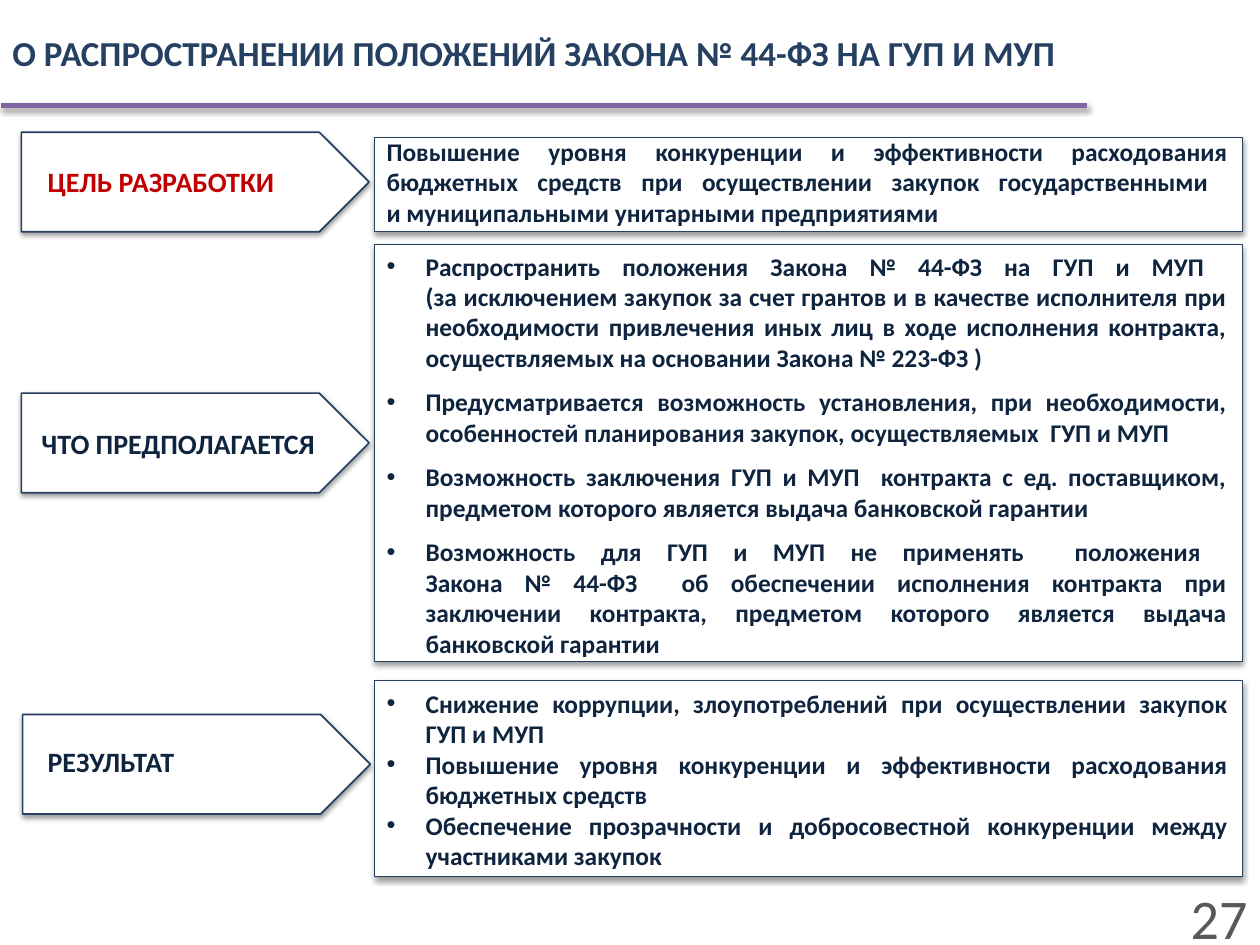
from copy import deepcopy
from dataclasses import dataclass
from typing import Optional

from lxml.etree import SubElement
from pptx import Presentation
from pptx.dml.color import RGBColor
from pptx.enum.shapes import MSO_CONNECTOR, MSO_SHAPE
from pptx.enum.text import MSO_ANCHOR, PP_ALIGN
from pptx.oxml.ns import qn
from pptx.util import Inches, Pt


@dataclass(frozen=True)
class Theme:
    font: str = "Calibri"
    white: str = "FFFFFF"
    navy: str = "254061"
    text: str = "0F243E"
    red: str = "C00000"
    purple: str = "8064A2"
    grey: str = "595959"
    shadow: str = "000000"
    title_size: float = 20
    label_size: float = 16
    body_size: float = 14.5
    number_size: float = 32


THEME = Theme()


@dataclass(frozen=True)
class Area:
    left: float
    top: float
    width: float
    height: float

    def lengths(self) -> list:
        return [Inches(v) for v in (self.left, self.top, self.width, self.height)]


@dataclass(frozen=True)
class TextStyle:
    size: float
    color: str
    bold: bool = True
    align: Optional[PP_ALIGN] = None
    anchor: MSO_ANCHOR = MSO_ANCHOR.TOP
    bullet: bool = False
    spacing: float = 0


@dataclass(frozen=True)
class Section:
    label: str
    label_area: Area
    label_style: TextStyle
    arrow: Area
    frame: Area
    body_area: Area
    body_style: TextStyle
    lines: tuple


LABEL = TextStyle(THEME.label_size, THEME.text, align=PP_ALIGN.JUSTIFY)
GOAL_LABEL = TextStyle(THEME.label_size, THEME.red, align=PP_ALIGN.JUSTIFY)
CENTRED_LABEL = TextStyle(THEME.label_size, THEME.text, align=PP_ALIGN.CENTER)
BODY = TextStyle(THEME.body_size, THEME.text, align=PP_ALIGN.JUSTIFY)
BULLETS = TextStyle(THEME.body_size, THEME.text, align=PP_ALIGN.JUSTIFY, bullet=True)
SPACED_BULLETS = TextStyle(THEME.body_size, THEME.text, align=PP_ALIGN.JUSTIFY,
                           bullet=True, spacing=4)
TITLE = TextStyle(THEME.title_size, THEME.navy, anchor=MSO_ANCHOR.MIDDLE)
NUMBER = TextStyle(THEME.number_size, THEME.grey, bold=False, align=PP_ALIGN.RIGHT,
                   anchor=MSO_ANCHOR.MIDDLE)

SECTIONS = (
    Section(
        "ЦЕЛЬ РАЗРАБОТКИ", Area(0.28, 1.26, 2.3, 0.37), GOAL_LABEL,
        Area(0.17, 1.05, 2.76, 0.79), Area(2.97, 1.09, 6.89, 0.75),
        Area(2.97, 1.03, 6.87, 0.83), BODY,
        ("Повышение уровня конкуренции и эффективности расходования бюджетных средств "
         "при осуществлении закупок государственными \n"
         "и муниципальными унитарными предприятиями",)),
    Section(
        "ЧТО ПРЕДПОЛАГАЕТСЯ", Area(0.2, 3.34, 2.43, 0.37), CENTRED_LABEL,
        Area(0.17, 3.12, 2.76, 0.79), Area(2.97, 1.94, 6.89, 3.31),
        Area(2.97, 1.94, 6.86, 3.37), SPACED_BULLETS,
        ("Распространить положения Закона № 44-ФЗ на ГУП и МУП \n"
         "(за исключением закупок за счет грантов и в качестве исполнителя при "
         "необходимости привлечения иных лиц в ходе исполнения контракта, "
         "осуществляемых на основании Закона № 223-ФЗ )",
         "Предусматривается возможность установления, при необходимости, "
         "особенностей планирования закупок, осуществляемых  ГУП и МУП",
         "Возможность заключения ГУП и МУП  контракта с ед. поставщиком, "
         "предметом которого является выдача банковской гарантии",
         "Возможность для ГУП и МУП не применять  положения \n"
         "Закона № 44-ФЗ  об обеспечении исполнения контракта при заключении "
         "контракта, предметом которого является выдача банковской гарантии")),
    Section(
        "РЕЗУЛЬТАТ", Area(0.28, 5.86, 2.29, 0.37), LABEL,
        Area(0.18, 5.67, 2.76, 0.79), Area(2.97, 5.4, 6.89, 1.56),
        Area(2.97, 5.41, 6.87, 1.57), BULLETS,
        ("Снижение коррупции, злоупотреблений при осуществлении закупок ГУП и МУП",
         "Повышение уровня конкуренции и эффективности расходования бюджетных средств",
         "Обеспечение прозрачности и добросовестной конкуренции между "
         "участниками закупок")),
)


def add_shadow(shape, distance: float, opacity: int) -> None:
    effects = SubElement(shape._element.spPr, qn("a:effectLst"))
    shadow = SubElement(effects, qn("a:outerShdw"), blurRad=str(Pt(3.1)),
                        dist=str(Pt(distance)), dir="5400000", rotWithShape="0")
    color = SubElement(shadow, qn("a:srgbClr"), val=THEME.shadow)
    SubElement(color, qn("a:alpha"), val=str(opacity * 1000))


def add_panel(page, kind: MSO_SHAPE, area: Area, line_width: float) -> None:
    panel = page.shapes.add_shape(kind, *area.lengths())
    panel.fill.solid()
    panel.fill.fore_color.rgb = RGBColor.from_string(THEME.white)
    panel.line.color.rgb = RGBColor.from_string(THEME.navy)
    panel.line.width = Pt(line_width)
    add_shadow(panel, 1.6, 38)


def add_bullet(para) -> None:
    properties = para._p.get_or_add_pPr()
    properties.set("marL", str(Inches(0.31)))
    properties.set("indent", str(Inches(-0.31)))
    SubElement(properties, qn("a:buFont"), typeface="Arial")
    SubElement(properties, qn("a:buChar"), char="•")


def add_text(page, area: Area, lines: tuple, style: TextStyle) -> None:
    box = page.shapes.add_textbox(*area.lengths())
    frame = box.text_frame
    frame.word_wrap = True
    frame.vertical_anchor = style.anchor
    font_format = {"name": THEME.font, "size": Pt(style.size), "bold": style.bold}
    para_format = {"alignment": style.align, "space_before": Pt(style.spacing),
                   "space_after": Pt(style.spacing)}
    for index, line in enumerate(lines):
        para = frame.add_paragraph() if index else frame.paragraphs[0]
        para.text = line.replace("\n", "\v")
        for name, value in para_format.items():
            setattr(para, name, value)
        if style.bullet:
            add_bullet(para)
        for span in para.runs:
            for name, value in font_format.items():
                setattr(span.font, name, value)
            span.font.color.rgb = RGBColor.from_string(style.color)
        # Line breaks take the same type size as the text around them
        for line_break in para._p.findall(qn("a:br")):
            line_break.append(deepcopy(para.runs[0]._r.rPr))


def add_title_rule(page) -> None:
    rule = page.shapes.add_connector(MSO_CONNECTOR.STRAIGHT, Inches(0.01), Inches(0.84),
                                     Inches(8.63), Inches(0.84))
    rule.line.color.rgb = RGBColor.from_string(THEME.purple)
    rule.line.width = Pt(3)
    add_shadow(rule, 1.8, 35)


def main() -> None:
    deck = Presentation()
    deck.slide_width, deck.slide_height = Inches(10), Inches(7.5)
    page = deck.slides.add_slide(deck.slide_layouts[6])

    # Heading
    add_text(page, Area(0, 0, 8.63, 0.84),
             ("О РАСПРОСТРАНЕНИИ ПОЛОЖЕНИЙ ЗАКОНА № 44-ФЗ НА ГУП И МУП",), TITLE)
    add_title_rule(page)

    # Sections: arrow with label, frame with text
    for section in SECTIONS:
        add_panel(page, MSO_SHAPE.PENTAGON, section.arrow, 1)
        add_text(page, section.label_area, (section.label,), section.label_style)
        add_panel(page, MSO_SHAPE.RECTANGLE, section.frame, 0.75)
        add_text(page, section.body_area, section.lines, section.body_style)

    # Page number
    add_text(page, Area(9.34, 7.05, 0.66, 0.45), ("27",), NUMBER)
    deck.save("out.pptx")


if __name__ == "__main__":
    main()
